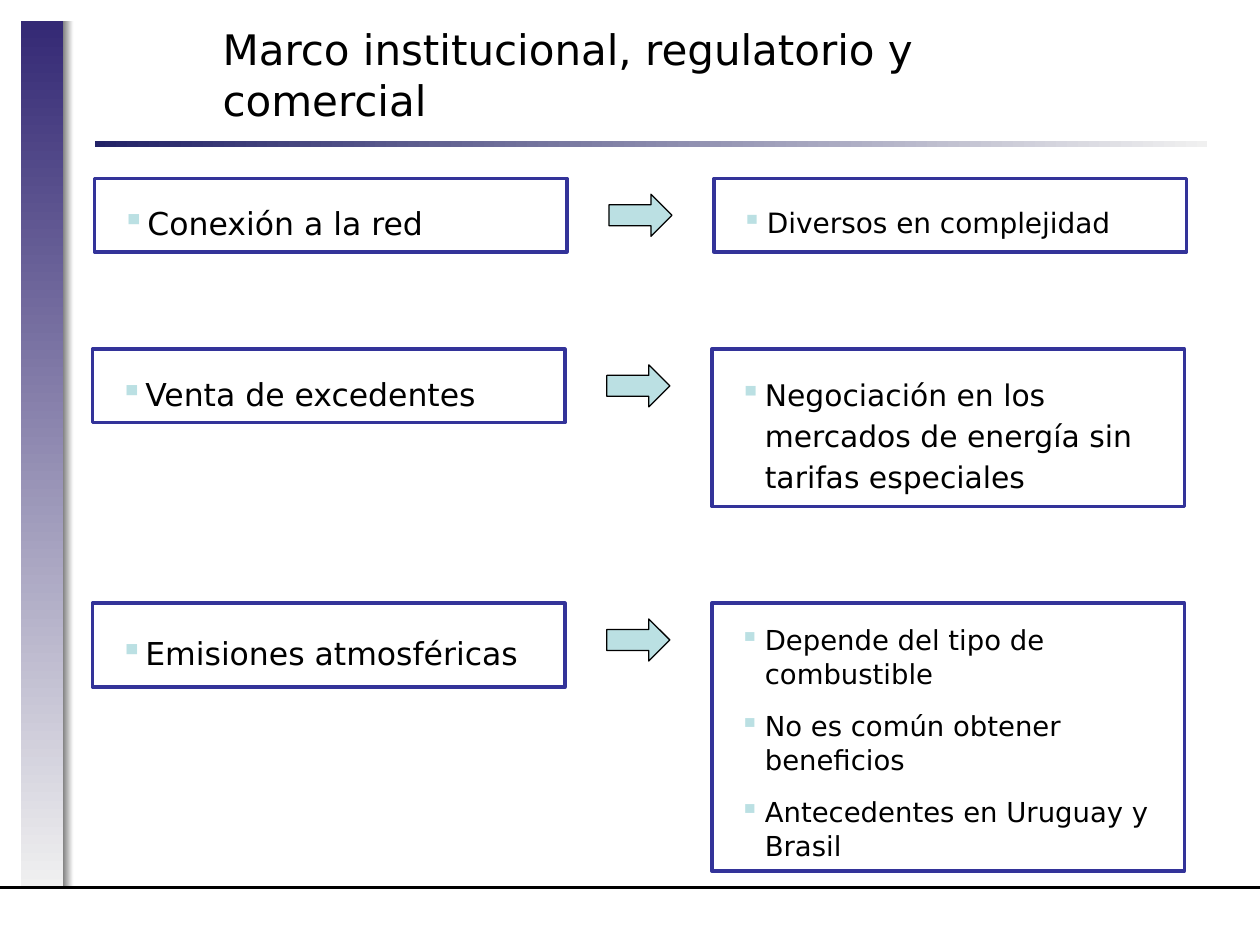
from lxml.etree import SubElement
from pptx import Presentation
from pptx.dml.color import RGBColor
from pptx.enum.shapes import MSO_CONNECTOR as Connector, MSO_SHAPE as Shape
from pptx.enum.text import MSO_ANCHOR as Anchor, MSO_AUTO_SIZE as AutoSize, PP_ALIGN as Align
from pptx.oxml.ns import qn
from pptx.util import Inches, Pt

FONT = "DejaVu Sans"
COLUMNS, ROWS = 120, 90
UNIT = Inches(10) / COLUMNS
BLACK, WHITE, NAVY, AQUA = "000000", "FFFFFF", "333399", "BBE0E3"
CARD_WIDTH, ANSWER_OFFSET = 45, 59
ARROW_OFFSET, ARROW_DROP = 49, 1.5


def color(value):
    return RGBColor.from_string(value)


def grid(*cells):
    return [round(cell * UNIT) for cell in cells]


def style_font(para, size):
    para.font.name = FONT
    para.font.size = Pt(size)
    para.font.color.rgb = color(BLACK)


def add_block(page, kind, box, fill, line, weight):
    block = page.shapes.add_shape(kind, *grid(*box))
    block.shadow.inherit = False
    block.fill.solid()
    block.fill.fore_color.rgb = color(fill)
    block.line.color.rgb = color(line)
    block.line.width = Pt(weight)
    return block


def add_gradient(page, box, start, end, angle):
    band = page.shapes.add_shape(Shape.RECTANGLE, *grid(*box))
    band.shadow.inherit = False
    band.line.fill.background()
    band.fill.gradient()
    band.fill.gradient_angle = angle
    for stop, value, position in zip(band.fill.gradient_stops, (start, end), (0, 1)):
        stop.color.rgb = color(value)
        stop.position = position


def add_frame(page):
    add_gradient(page, (2, 2, 4, 82.5), "342975", "F0F0F0", 270)
    add_gradient(page, (6, 2, 1, 82.5), "808080", WHITE, 0)
    add_gradient(page, (9, 13.45, 106, 0.6), "222267", "F0F0F0", 0)
    rule = page.shapes.add_connector(Connector.STRAIGHT, *grid(0, 84.55, COLUMNS, 84.55))
    rule.line.color.rgb = color(BLACK)
    rule.line.width = Pt(1.75)
    SubElement(rule._element.spPr, qn("a:effectLst"))


def add_title(page, box, text):
    title = page.shapes.title
    title.left, title.top, title.width, title.height = grid(*box)
    frame = title.text_frame
    frame.text = text
    frame.word_wrap = True
    frame.auto_size = AutoSize.NONE
    frame.vertical_anchor = Anchor.MIDDLE
    frame.paragraphs[0].alignment = Align.LEFT
    style_font(frame.paragraphs[0], 24)


def add_bullet(para):
    properties = para._p.get_or_add_pPr()
    properties.set("marL", str(Inches(0.42)))
    properties.set("indent", str(Inches(-0.2)))
    tint = SubElement(properties, qn("a:buClr"))
    SubElement(tint, qn("a:srgbClr"), val=AQUA)
    SubElement(properties, qn("a:buChar"), char="▪")


def add_card(page, box, lines, size, spacing):
    card = add_block(page, Shape.RECTANGLE, box, WHITE, NAVY, 2)
    frame = card.text_frame
    frame.word_wrap = True
    frame.vertical_anchor = Anchor.MIDDLE
    frame.margin_left = frame.margin_right = 0
    frame.margin_top, frame.margin_bottom = Inches(0.13), Inches(0.05)
    for index, text in enumerate(lines):
        para = frame.add_paragraph() if index else frame.paragraphs[0]
        para.text = text
        para.alignment = Align.LEFT
        add_bullet(para)
        para.line_spacing = spacing
        para.space_before = Pt(6 if index else 0)
        para.space_after = Pt(4)
        style_font(para, size)


def add_pair(page, left, top, topic, topic_height, answers, answer_height, size, spacing=1.14):
    add_card(page, (left, top, CARD_WIDTH, topic_height), [topic], 18, 1.14)
    add_card(page, (left + ANSWER_OFFSET, top, CARD_WIDTH, answer_height), answers, size, spacing)
    arrow_box = (left + ARROW_OFFSET, top + ARROW_DROP, 6, 4)
    add_block(page, Shape.RIGHT_ARROW, arrow_box, AQUA, BLACK, 0.75)


def main():
    deck = Presentation()
    deck.slide_width, deck.slide_height = grid(COLUMNS, ROWS)
    page = deck.slides.add_slide(deck.slide_layouts[5])
    add_frame(page)
    add_title(page, (20, 2.75, 88, 8.65), "Marco institucional, regulatorio y comercial")
    add_pair(page, 9, 17, "Conexión a la red", 7, ["Diversos en complejidad"], 7, 16)
    add_pair(page, 8.8, 33.25, "Venta de excedentes", 7,
             ["Negociación en los mercados de energía sin tarifas especiales"], 15, 17)
    add_pair(page, 8.8, 57.45, "Emisiones atmosféricas", 8,
             ["Depende del tipo de combustible",
              "No es común obtener beneficios",
              "Antecedentes en Uruguay y Brasil"], 25.5, 15.7, 1.04)
    deck.save("out.pptx")


if __name__ == "__main__":
    main()
